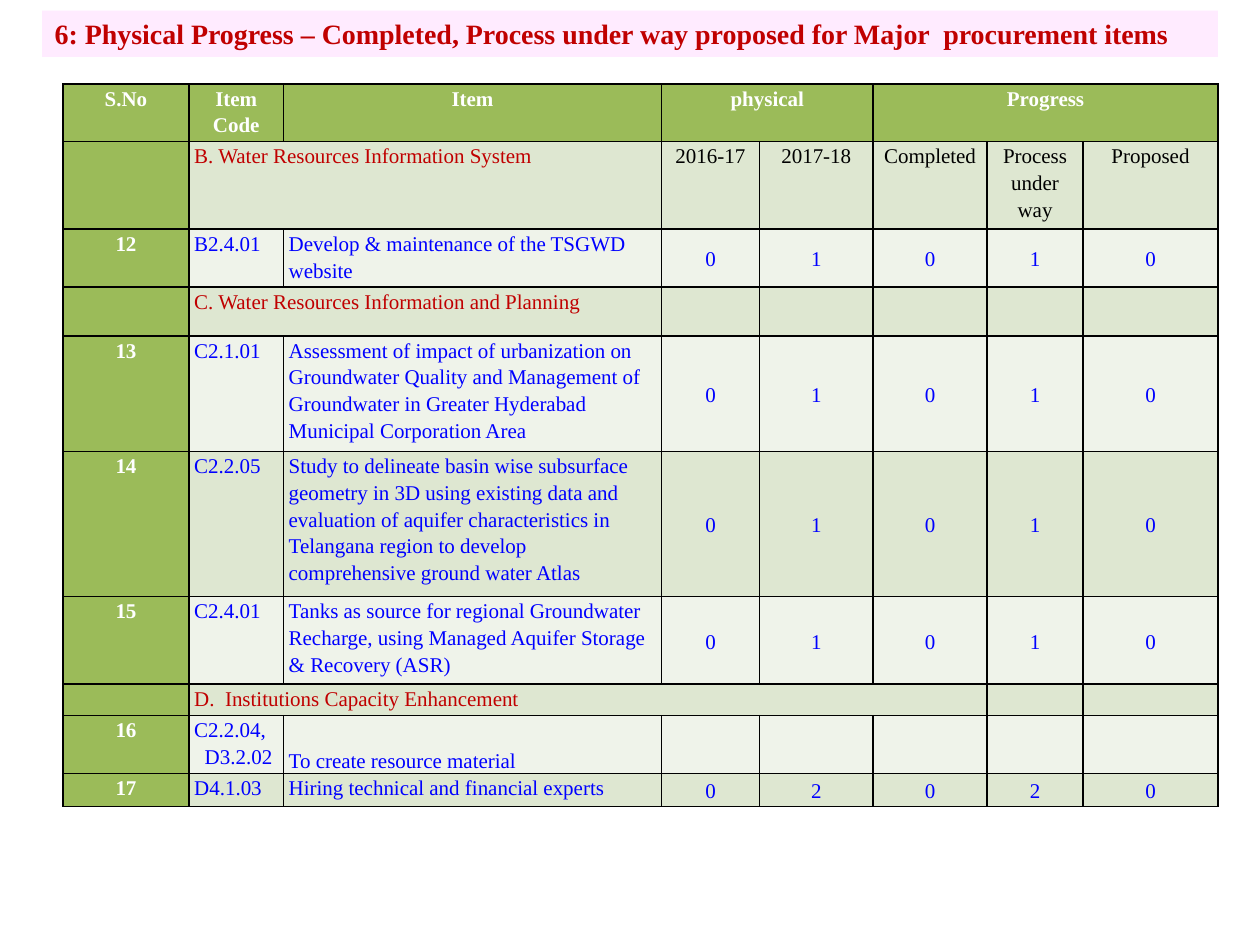
"""Build a slide with a table of physical progress for major procurement items."""
from lxml import etree
from pptx import Presentation
from pptx.dml.color import RGBColor
from pptx.enum import text as t
from pptx.oxml import ns
from pptx.util import Pt

FONT = "Times New Roman"
HUES = {
    "head": "9BBB59", "odd": "DEE7D1", "even": "EFF3EA", "band": "FFEBFF",
    "red": "C00000", "blue": "0000FF", "black": "000000", "white": "FFFFFF",
}


def style(para, size, hue, bold):
    for run in para.runs:
        run.font.name = FONT
        run.font.size = Pt(size)
        run.font.bold = bold
        run.font.color.rgb = RGBColor.from_string(HUES[hue])


def frame(cell):
    props = cell._tc.get_or_add_tcPr()
    for side in ("lnL", "lnR", "lnT", "lnB"):
        line = etree.SubElement(props, ns.qn(f"a:{side}"), w=str(Pt(1)))
        fill = etree.SubElement(line, ns.qn("a:solidFill"))
        etree.SubElement(fill, ns.qn("a:srgbClr"), val=HUES["black"])


deck = Presentation()
deck.slide_width, deck.slide_height = Pt(720), Pt(540)
slide = deck.slides.add_slide(deck.slide_layouts[5])

title = slide.shapes.title
title.left, title.top, title.width, title.height = Pt(24), Pt(6), Pt(672), Pt(26.6)
title.fill.solid()
title.fill.fore_color.rgb = RGBColor.from_string(HUES["band"])
box = title.text_frame
box.text = "6: Physical Progress – Completed, Process under way proposed for Major  procurement items"
box.auto_size = t.MSO_AUTO_SIZE.NONE
box.vertical_anchor = t.MSO_ANCHOR.TOP
box.paragraphs[0].alignment = t.PP_ALIGN.LEFT
style(box.paragraphs[0], 16, "red", True)

widths = [72, 54, 216, 56, 65, 65, 55, 77]
heights = [33, 50, 33, 28, 66, 83, 50, 18, 33, 19]
rows = [
    ["S.No", "Item Code", "Item", "physical", "", "Progress", "", ""],
    ["", "B. Water Resources Information System", "", "2016-17", "2017-18",
     "Completed", "Process under way", "Proposed"],
    ["12", "B2.4.01", "Develop & maintenance of the TSGWD website", *"01010"],
    ["", "C. Water Resources Information and Planning", *[""] * 6],
    ["13", "C2.1.01", "Assessment of impact of urbanization on Groundwater Quality and "
     "Management of Groundwater in Greater Hyderabad Municipal Corporation Area", *"01010"],
    ["14", "C2.2.05", "Study to delineate basin wise subsurface geometry in 3D using "
     "existing data and evaluation of aquifer characteristics in Telangana region to "
     "develop comprehensive ground water Atlas", *"01010"],
    ["15", "C2.4.01", "Tanks as source for regional Groundwater Recharge, using Managed "
     "Aquifer Storage & Recovery (ASR)", *"01010"],
    ["", "D.  Institutions Capacity Enhancement", *[""] * 6],
    ["16", "C2.2.04, D3.2.02", "To create resource material", *[""] * 5],
    ["17", "D4.1.03", "Hiring technical and financial experts", *"02020"],
]
merges = [(0, 3, 4), (0, 5, 7), (1, 1, 2), (3, 1, 2), (7, 1, 5)]
parts = (1, 3, 7)

table = slide.shapes.add_table(
    len(rows), len(widths), Pt(36), Pt(48), Pt(sum(widths)), Pt(sum(heights))).table
for col, width in zip(table.columns, widths):
    col.width = Pt(width)
for row, height in zip(table.rows, heights):
    row.height = Pt(height)
for r, first, last in merges:
    table.cell(r, first).merge(table.cell(r, last))

for r, row in enumerate(rows):
    for c, word in enumerate(row):
        cell = table.cell(r, c)
        frame(cell)
        green = r == 0 or c == 0
        band = "head" if green else "odd" if r % 2 else "even"
        cell.fill.solid()
        cell.fill.fore_color.rgb = RGBColor.from_string(HUES[band])
        cell.margin_left = cell.margin_right = Pt(3)
        cell.margin_top = cell.margin_bottom = Pt(0)
        if r > 1 and c > 2:
            cell.vertical_anchor = t.MSO_ANCHOR.MIDDLE
        cell.text_frame.text = word
        para = cell.text_frame.paragraphs[0]
        para.line_spacing = 1.15
        centre = green or c > 2
        para.alignment = t.PP_ALIGN.CENTER if centre else t.PP_ALIGN.LEFT
        if green:
            hue = "white"
        elif r in parts:
            hue = "red" if c == 1 else "black"
        else:
            hue = "blue"
        style(para, 12, hue, green)
        if not word:
            etree.SubElement(para._p, ns.qn("a:endParaRPr"), sz="1200")

table.cell(8, 2).vertical_anchor = t.MSO_ANCHOR.BOTTOM
hang = table.cell(8, 1).text_frame.paragraphs[0]._p.get_or_add_pPr()
hang.set("marL", str(Pt(6)))
hang.set("indent", str(-Pt(6)))

deck.save("out.pptx")
